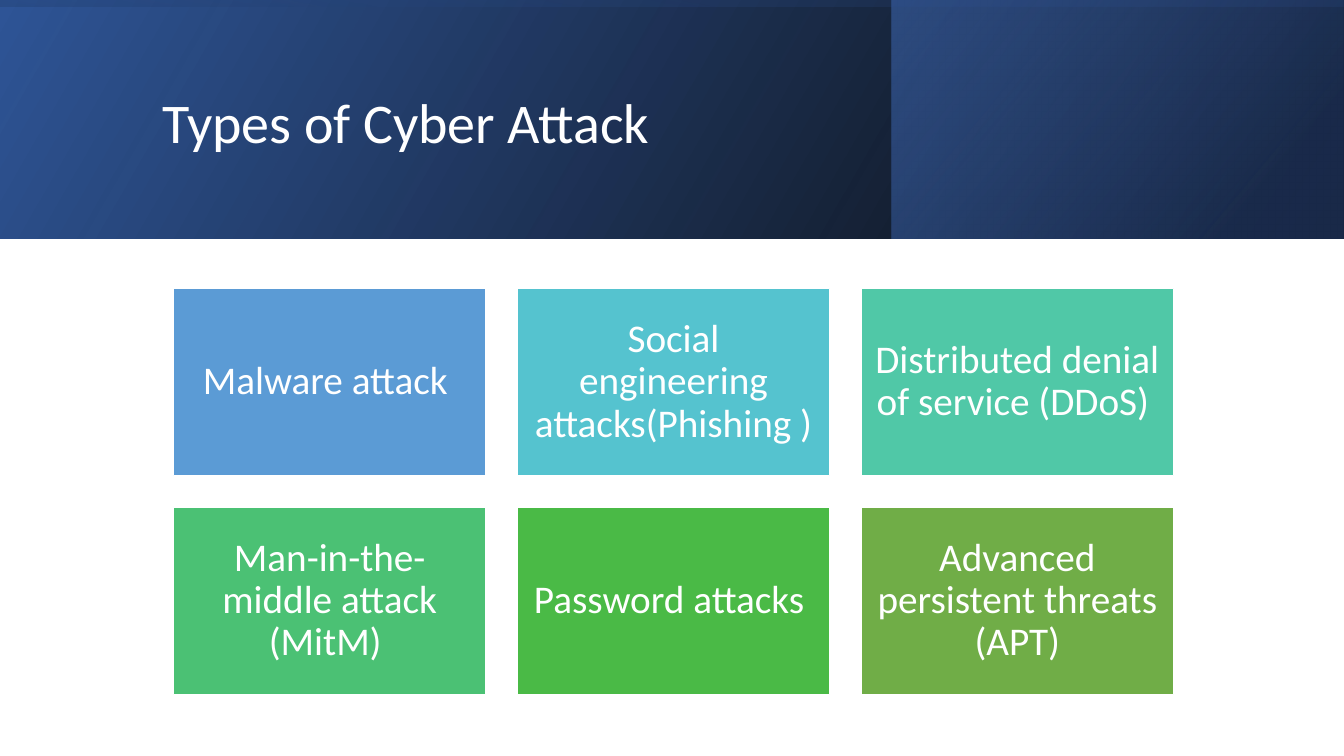
import pptx
import pptx.util
import pptx.dml.color
import pptx.enum.shapes
import pptx.enum.text
import pptx.oxml
import pptx.oxml.ns

PX = 9144  # EMU per px, 100 px to the inch
COLORS = {
    "white": "FFFFFF", "black": "000000", "navy": "203864",
    "royal": "2F5597", "bright": "4472C4",
    "blue": "5B9BD5", "cyan": "55C3CF", "teal": "50C8A7",
    "mint": "4BC174", "green": "4ABA46", "olive": "70AD47",
}


def px(length):
    return pptx.util.Emu(length * PX)


def rgb(name):
    return pptx.dml.color.RGBColor.from_string(COLORS[name])


def write(frame, text, size, font="Calibri", color="white", align="LEFT", inset=10):
    frame.word_wrap = True
    frame.auto_size = pptx.enum.text.MSO_AUTO_SIZE.NONE
    frame.vertical_anchor = pptx.enum.text.MSO_ANCHOR.MIDDLE
    frame.margin_left = frame.margin_right = px(inset)
    frame.margin_top = frame.margin_bottom = px(min(inset, 12))
    para = frame.paragraphs[0]
    para.alignment = pptx.enum.text.PP_ALIGN[align]
    para.line_spacing = 0.9
    span = para.add_run()
    span.text = text
    span.font.name = font
    span.font.size = pptx.util.Pt(size)
    span.font.color.rgb = rgb(color)


class Slide:
    def __init__(self, deck):
        self.page = deck.slides.add_slide(deck.slide_layouts[5])

    def rectangle(self, left, top, width, height):
        box = self.page.shapes.add_shape(
            pptx.enum.shapes.MSO_SHAPE.RECTANGLE,
            px(left), px(top), px(width), px(height))
        box.shadow.inherit = False
        return box

    def band(self, place, stops, angle, rotation=0):
        """Mirrored rectangle with a translucent gradient; stops are (position, color, alpha)."""
        box = self.rectangle(*place)
        box.rotation = rotation
        box.line.fill.background()
        properties = box.element.spPr
        properties.get_or_add_xfrm().set("flipH", "1")
        marks = "".join(
            f'<a:gs pos="{position * 1000}"><a:srgbClr val="{COLORS[color]}">'
            f'<a:alpha val="{alpha * 1000}"/></a:srgbClr></a:gs>'
            for position, color, alpha in stops)
        gradient = pptx.oxml.parse_xml(
            f'<a:gradFill {pptx.oxml.ns.nsdecls("a")} rotWithShape="1">'
            f'<a:gsLst>{marks}</a:gsLst>'
            f'<a:lin ang="{angle * 60000}" scaled="0"/></a:gradFill>')
        properties.find(pptx.oxml.ns.qn("a:prstGeom")).addnext(gradient)

    def title(self, text, left, top, width, height):
        title = self.page.shapes.title
        title.left, title.top = px(left), px(top)
        title.width, title.height = px(width), px(height)
        write(title.text_frame, text, 40)
        # Bring the title in front of the bands
        title.element.getparent().append(title.element)

    def card(self, text, color, left, top, width, height):
        box = self.rectangle(left, top, width, height)
        box.fill.solid()
        box.fill.fore_color.rgb = rgb(color)
        box.line.color.rgb = rgb("white")
        box.line.width = pptx.util.Pt(1)
        write(box.text_frame, text, 28, align="CENTER", inset=12)


def main():
    deck = pptx.Presentation()
    deck.slide_width, deck.slide_height = px(1333), px(750)
    slide = Slide(deck)

    # Header bands
    slide.band((0, 0, 1333, 237), [(0, "black", 96), (100, "royal", 100)], 330)
    slide.band((884, 0, 448, 237), [(19, "navy", 68), (100, "bright", 48)], 320)
    slide.band((548, -548, 237, 1333), [(23, "royal", 16), (99, "black", 45)], 350,
               rotation=270)
    slide.title("Types of Cyber Attack", 151, 38, 1063, 172)

    # Grid of attack types
    attacks = [
        ("Malware attack ", "blue"),
        ("Social engineering attacks(Phishing )", "cyan"),
        ("Distributed denial of service (DDoS) ", "teal"),
        ("Man-in-the-middle attack (MitM) ", "mint"),
        ("Password attacks ", "green"),
        ("Advanced persistent threats (APT)", "olive"),
    ]
    for index, (text, color) in enumerate(attacks):
        row, column = divmod(index, 3)
        slide.card(text, color, 172 + 341 * column, 286 + 217 * row, 310, 186)

    deck.save("out.pptx")


if __name__ == "__main__":
    main()
